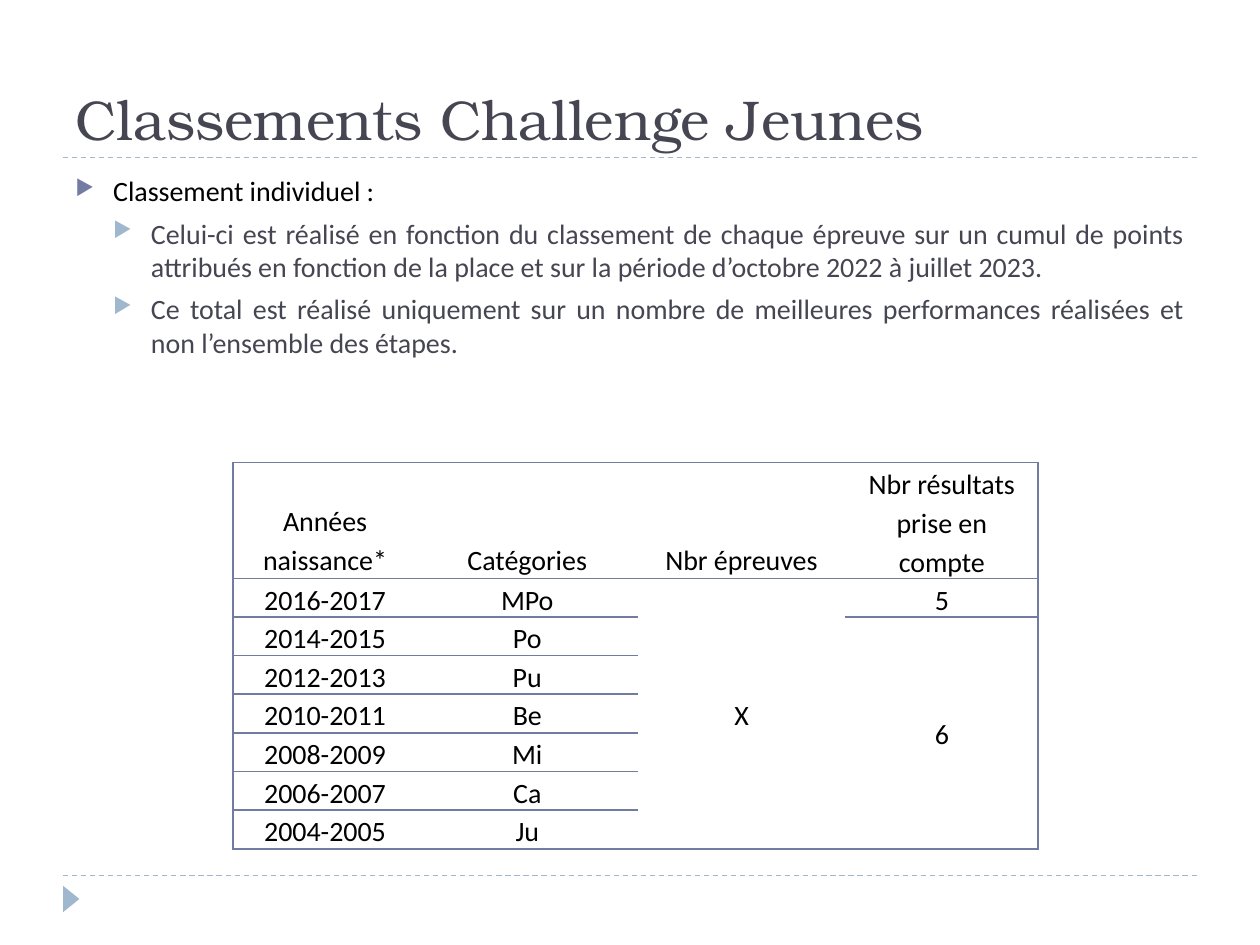
from dataclasses import dataclass

from pptx import Presentation
from pptx.dml.color import RGBColor
from pptx.enum.dml import MSO_LINE_DASH_STYLE as Dash
from pptx.enum.shapes import MSO_CONNECTOR as Connector, MSO_SHAPE as Preset
from pptx.enum.text import MSO_ANCHOR as Anchor, PP_ALIGN as Align
from pptx.oxml.ns import qn
from pptx.util import Inches, Pt
from lxml.etree import SubElement

COLORS = {
    "ink": "464653",
    "black": "000000",
    "white": "FFFFFF",
    "border": "727CA3",
    "accent": "9FB8CD",
}
BODY_FONT, TITLE_FONT = "Calibri", "TeX Gyre Bonum"


@dataclass(frozen=True)
class Bullet:
    text: str
    level: int
    color: str
    marker: str
    space: float


@dataclass(frozen=True)
class Merge:
    column: int
    first: int
    last: int


BULLETS = [
    Bullet("Classement individuel :", 0, "black", "border", 6),
    Bullet("Celui-ci est réalisé en fonction du classement de chaque épreuve sur un cumul "
           "de points attribués en fonction de la place et sur la période d’octobre 2022 "
           "à juillet 2023. ", 1, "ink", "accent", 5),
    Bullet("Ce total est réalisé uniquement sur un nombre de meilleures performances "
           "réalisées et non l’ensemble des étapes. ", 1, "ink", "accent", 5),
]
HEADERS = ["Années naissance*", "Catégories", "Nbr épreuves", "Nbr résultats prise en compte"]
CATEGORIES = ["MPo", "Po", "Pu", "Be", "Mi", "Ca", "Ju"]
COUNTS = {(1, 2): "X", (1, 3): "5", (2, 3): "6"}
MERGES = [Merge(2, 1, 7), Merge(3, 2, 7)]
COLUMN_WIDTHS = [1.46, 1.75, 1.65, 1.53]
ROW_HEIGHTS = [0.83] + [0.21] * len(CATEGORIES)


def rgb(name: str) -> RGBColor:
    return RGBColor.from_string(COLORS[name])


def write(para, text: str, *, size: float = 16, font: str = BODY_FONT,
          color: str = "black", align=Align.LEFT) -> None:
    para.alignment = align
    span = para.add_run()
    span.text = text
    span.font.size = Pt(size)
    span.font.name = font
    span.font.color.rgb = rgb(color)


def add_text_frame(page, left: float, top: float, width: float, height: float, anchor):
    box = page.shapes.add_textbox(Inches(left), Inches(top), Inches(width), Inches(height))
    frame = box.text_frame
    frame.word_wrap = True
    frame.vertical_anchor = anchor
    return frame


def add_rule(page, y: float) -> None:
    rule = page.shapes.add_connector(
        Connector.STRAIGHT, Inches(0.5), Inches(y), Inches(9.5), Inches(y))
    rule.line.color.rgb = rgb("accent")
    rule.line.width = Pt(0.75)
    rule.line.dash_style = Dash.DASH
    SubElement(rule._element.spPr, qn("a:effectLst"))


def add_marker(page) -> None:
    marker = page.shapes.add_shape(
        Preset.ISOSCELES_TRIANGLE, Inches(0.46), Inches(7.07), Inches(0.21), Inches(0.13))
    marker.rotation = 90
    marker.shadow.inherit = False
    marker.fill.solid()
    marker.fill.fore_color.rgb = rgb("accent")
    marker.line.fill.background()


def add_bullet(para, bullet: Bullet) -> None:
    write(para, bullet.text, color=bullet.color, align=Align.JUSTIFY)
    para.level = bullet.level
    para.space_before = Pt(bullet.space)
    props = para._p.get_or_add_pPr()
    props.set("marL", str(Inches(0.3 * (bullet.level + 1))))
    props.set("indent", str(Inches(-0.3)))
    SubElement(SubElement(props, qn("a:buClr")), qn("a:srgbClr"), val=COLORS[bullet.marker])
    SubElement(props, qn("a:buSzPct"), val="76000")
    SubElement(props, qn("a:buChar"), char="▶")


def set_borders(cell, sides: str) -> None:
    props = cell._tc.get_or_add_tcPr()
    for side in "LRTB":
        line = SubElement(props, qn(f"a:ln{side}"), w=str(Pt(1)))
        if side in sides:
            fill = SubElement(line, qn("a:solidFill"))
            SubElement(fill, qn("a:srgbClr"), val=COLORS["border"])
        else:
            SubElement(line, qn("a:noFill"))


def border_sides(row: int, column: int) -> str:
    sides = {0: "L", len(HEADERS) - 1: "R"}.get(column, "")
    merge = next((m for m in MERGES if m.column == column and m.first <= row <= m.last), None)
    if merge is None or row == merge.first:
        return sides + "TB"
    return sides + ("B" if row == merge.last else "")


def format_cell(cell, row: int, column: int, text: str) -> None:
    set_borders(cell, border_sides(row, column))
    cell.fill.solid()
    cell.fill.fore_color.rgb = rgb("white")
    cell.margin_left = cell.margin_right = Inches(0.05)
    cell.margin_top = cell.margin_bottom = 0
    cell.vertical_anchor = Anchor.MIDDLE if (row, column) in COUNTS else Anchor.BOTTOM
    if text:
        para = cell.text_frame.paragraphs[0]
        para.line_spacing = 1.15
        write(para, text, align=Align.CENTER)


def add_results_table(page) -> None:
    frame = page.shapes.add_table(
        len(ROW_HEIGHTS), len(HEADERS), Inches(1.85), Inches(3.67), Inches(6.38), Inches(2.88))
    table = frame.table
    table.first_row = table.horz_banding = False
    for column, width in zip(table.columns, COLUMN_WIDTHS):
        column.width = Inches(width)
    for row, height in zip(table.rows, ROW_HEIGHTS):
        row.height = Inches(height)
    frame.height = Inches(2.88)

    texts = {(0, column): header for column, header in enumerate(HEADERS)} | COUNTS
    for row, category in enumerate(CATEGORIES, start=1):
        year = 2018 - 2 * row
        texts[row, 0] = f"{year}-{year + 1}"
        texts[row, 1] = category
    for row in range(len(ROW_HEIGHTS)):
        for column in range(len(HEADERS)):
            format_cell(table.cell(row, column), row, column, texts.get((row, column), ""))
    for merge in MERGES:
        table.cell(merge.first, merge.column).merge(table.cell(merge.last, merge.column))


def main() -> None:
    """Build the youth challenge ranking slide."""
    deck = Presentation()
    deck.slide_width, deck.slide_height = Inches(10), Inches(7.5)
    page = deck.slides.add_slide(deck.slide_layouts[6])

    for y in (6.95, 1.25):
        add_rule(page, y)
    add_marker(page)

    title = add_text_frame(page, 0.5, 0.17, 9, 1.08, Anchor.BOTTOM)
    write(title.paragraphs[0], "Classements Challenge Jeunes",
          size=32, font=TITLE_FONT, color="ink")

    body = add_text_frame(page, 0.5, 1.33, 9, 5.4, Anchor.TOP)
    for index, bullet in enumerate(BULLETS):
        add_bullet(body.add_paragraph() if index else body.paragraphs[0], bullet)

    add_results_table(page)
    deck.save("out.pptx")


if __name__ == "__main__":
    main()
